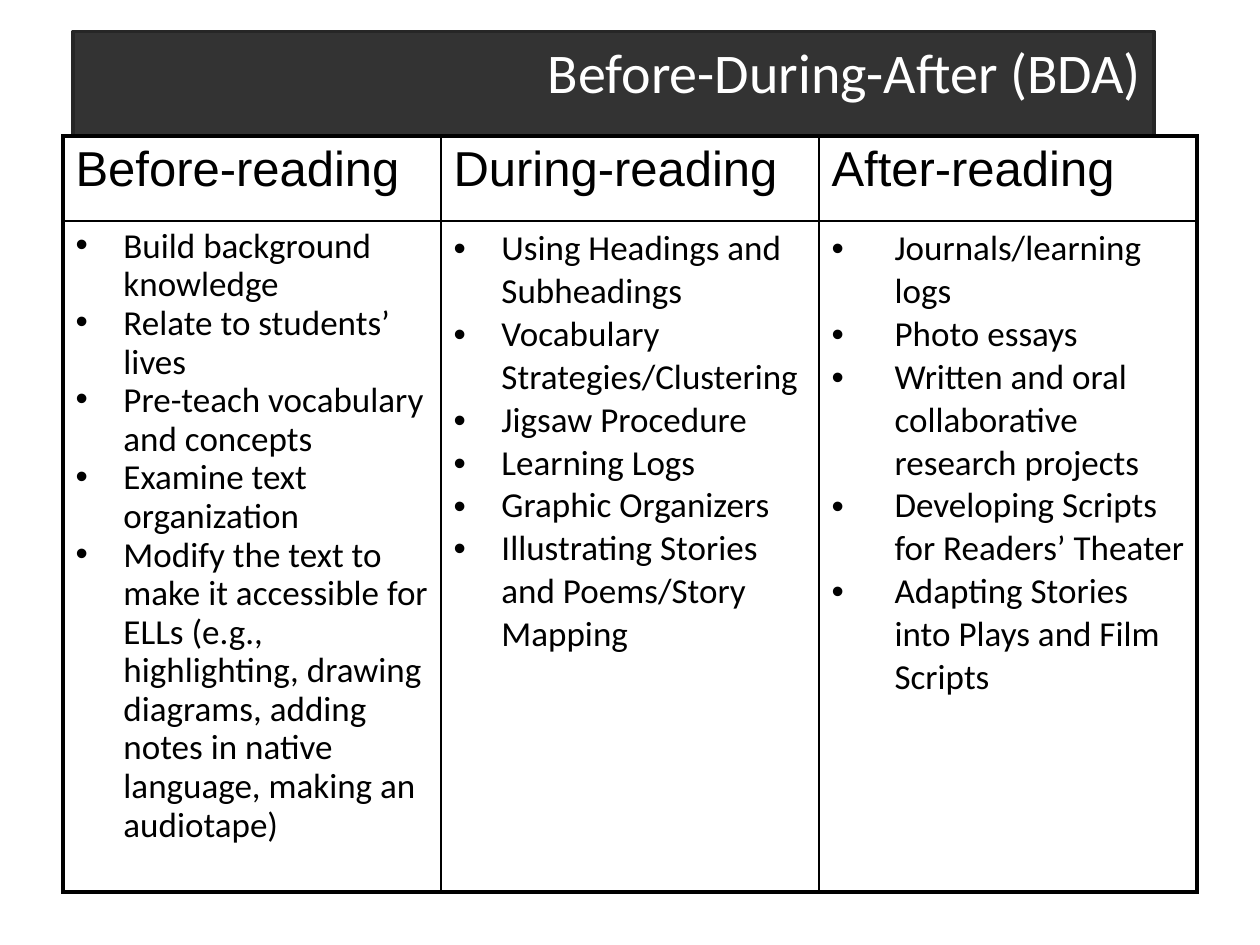
from dataclasses import dataclass

from lxml import etree
from pptx import Presentation
from pptx import util as u
from pptx.dml.color import RGBColor
from pptx.enum import text
from pptx.oxml.ns import qn


@dataclass(frozen=True)
class Theme:
    ink: str = "000000"
    banner: str = "333333"
    banner_line: str = "262626"
    banner_text: str = "FFFFFF"
    body_font: str = "Calibri"
    heading_font: str = "Arial"
    title_size: float = 32
    heading_size: float = 28
    body_size: float = 20
    banner_rule: float = 2
    outer_rule: float = 2.25
    inner_rule: float = 1


@dataclass(frozen=True)
class Stage:
    heading: str
    strategies: tuple[str, ...]
    indent: float = 0.38
    line_spacing: float | None = None


THEME = Theme()
WIDTH, HEIGHT = u.Inches(10), u.Inches(7.5)
MARGIN = 0.05  # share of the slide's width
TABLE_TOP = 0.144  # shares of the slide's height
ROW_SHARES = (0.09, 0.71)

STAGES = (
    Stage("Before-reading", (
        "Build background knowledge",
        "Relate to students’ lives",
        "Pre-teach vocabulary and concepts",
        "Examine text organization",
        "Modify the text to make it accessible for ELLs (e.g., highlighting, "
        "drawing diagrams, adding notes in native language, making an audiotape)",
    ), line_spacing=0.9),
    Stage("During-reading", (
        "Using Headings and Subheadings",
        "Vocabulary Strategies/Clustering",
        "Jigsaw Procedure",
        "Learning Logs",
        "Graphic Organizers",
        "Illustrating Stories and Poems/Story Mapping",
    )),
    Stage("After-reading", (
        "Journals/learning logs",
        "Photo essays",
        "Written and oral collaborative research projects",
        "Developing Scripts for Readers’ Theater",
        "Adapting Stories into Plays and Film Scripts",
    ), indent=0.5),
)


def add_run(paragraph, words: str, font: str, size: float, color: str) -> None:
    run = paragraph.add_run()
    run.text = words
    run.font.name = font
    run.font.size = u.Pt(size)
    run.font.color.rgb = RGBColor.from_string(color)


def add_bullet(paragraph, indent: float) -> None:
    props = paragraph._p.get_or_add_pPr()
    props.set("marL", str(u.Inches(indent)))
    props.set("indent", str(-u.Inches(indent)))
    etree.SubElement(props, qn("a:buFont"), typeface=THEME.heading_font)
    etree.SubElement(props, qn("a:buChar"), char="•")


def set_borders(cell, outer_sides: str) -> None:
    """Draw all four sides, with the heavy rule on the outer ones."""
    props = cell._tc.get_or_add_tcPr()
    for side in "LRTB":
        weight = THEME.outer_rule if side in outer_sides else THEME.inner_rule
        line = etree.SubElement(props, qn(f"a:ln{side}"), w=str(u.Pt(weight)))
        fill = etree.SubElement(line, qn("a:solidFill"))
        etree.SubElement(fill, qn("a:srgbClr"), val=THEME.ink)


def fill_heading(cell, stage: Stage) -> None:
    paragraph = cell.text_frame.paragraphs[0]
    before = etree.SubElement(paragraph._p.get_or_add_pPr(), qn("a:spcBef"))
    etree.SubElement(before, qn("a:spcPct"), val="20000")
    add_run(paragraph, stage.heading, THEME.heading_font, THEME.heading_size, THEME.ink)


def fill_strategies(cell, stage: Stage) -> None:
    frame = cell.text_frame
    for i, strategy in enumerate(stage.strategies):
        paragraph = frame.add_paragraph() if i else frame.paragraphs[0]
        paragraph.line_spacing = stage.line_spacing
        add_bullet(paragraph, stage.indent)
        add_run(paragraph, strategy, THEME.body_font, THEME.body_size, THEME.ink)


def format_title(title, words: str) -> None:
    title.left, title.top = u.Inches(0.58), u.Inches(0.25)
    title.width, title.height = u.Inches(8.58), u.Inches(0.64)
    title.fill.solid()
    title.fill.fore_color.rgb = RGBColor.from_string(THEME.banner)
    title.line.color.rgb = RGBColor.from_string(THEME.banner_line)
    title.line.width = u.Pt(THEME.banner_rule)
    frame = title.text_frame
    frame.word_wrap = True
    frame.auto_size = text.MSO_AUTO_SIZE.SHAPE_TO_FIT_TEXT
    frame.vertical_anchor = text.MSO_ANCHOR.TOP
    paragraph = frame.paragraphs[0]
    paragraph.alignment = text.PP_ALIGN.RIGHT
    add_run(paragraph, words, THEME.body_font, THEME.title_size, THEME.banner_text)


def add_stage_table(slide, stages: tuple[Stage, ...]) -> None:
    left, top = int(WIDTH * MARGIN), int(HEIGHT * TABLE_TOP)
    table = slide.shapes.add_table(
        len(ROW_SHARES), len(stages), left, top,
        WIDTH - 2 * left, int(HEIGHT * sum(ROW_SHARES))).table
    table.first_row = table.horz_banding = False
    for row, share in zip(table.rows, ROW_SHARES):
        row.height = int(HEIGHT * share)
    for column, stage in enumerate(stages):
        edge = {0: "L", len(stages) - 1: "R"}.get(column, "")
        heading, strategies = table.cell(0, column), table.cell(1, column)
        fill_heading(heading, stage)
        fill_strategies(strategies, stage)
        for cell, row_edge in ((heading, "T"), (strategies, "B")):
            set_borders(cell, edge + row_edge)
            cell.fill.background()


def main() -> None:
    deck = Presentation()
    deck.slide_width, deck.slide_height = WIDTH, HEIGHT
    slide = deck.slides.add_slide(deck.slide_layouts.get_by_name("Title Only"))

    # Banner title
    format_title(slide.shapes.title, "Before-During-After (BDA)")

    # Reading stages, one column each
    add_stage_table(slide, STAGES)

    deck.save("out.pptx")


if __name__ == "__main__":
    main()
